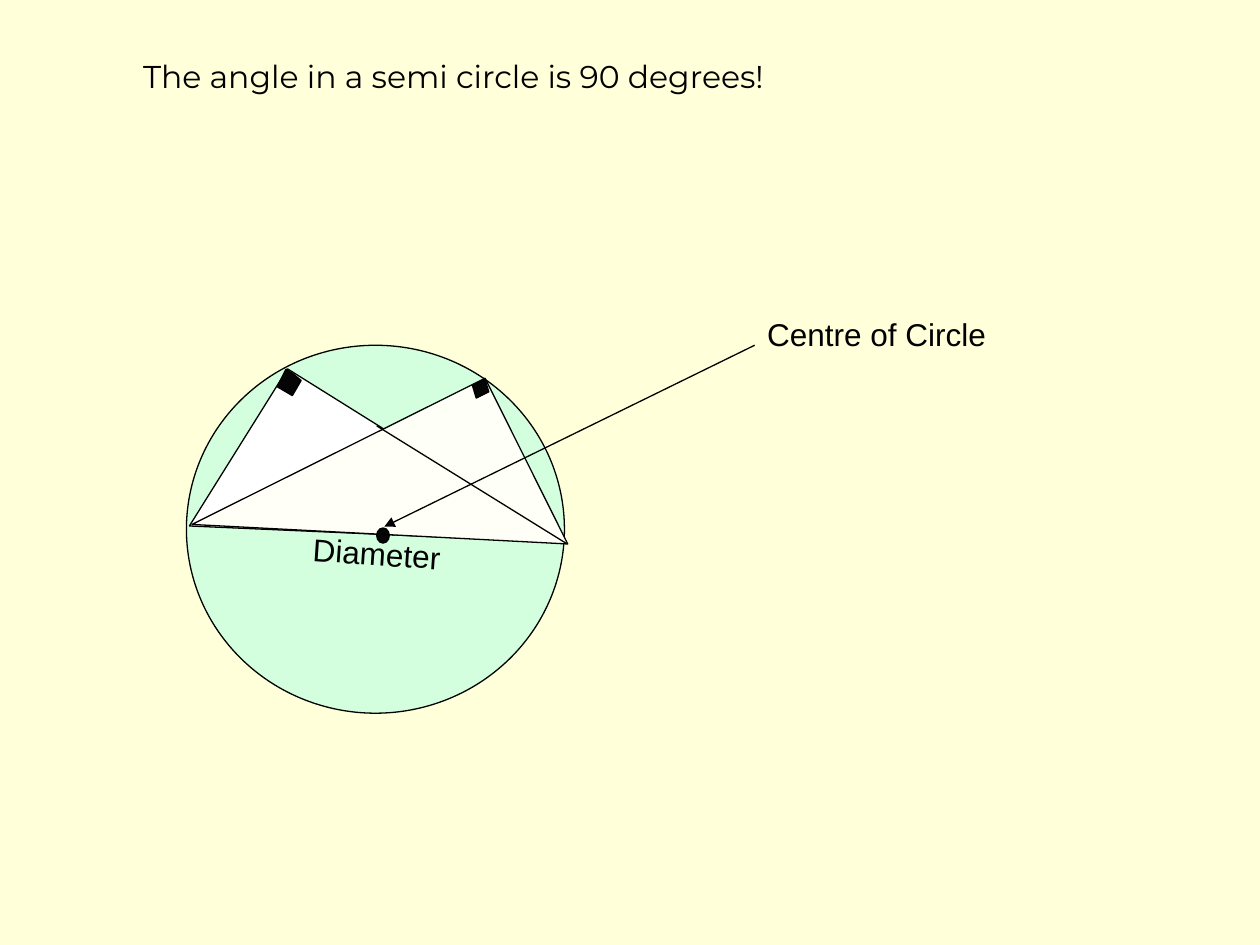
from lxml import etree
from pptx import Presentation
from pptx import util as u
from pptx.dml.color import RGBColor
from pptx.enum import shapes, text
from pptx.oxml.ns import qn

BLACK = "000000"
FORMS = shapes.MSO_SHAPE


def colour(target, value, alpha=None):
    """Give a fill or a font colour a hex value and an optional opacity in percent."""
    target.solid()
    target.fore_color.rgb = RGBColor.from_string(value)
    if alpha is not None:
        node = target._xPr.find(qn("a:solidFill"))[0]
        etree.SubElement(node, qn("a:alpha")).set("val", str(alpha * 1000))


def finish(shape, fill, alpha=None):
    shape.shadow.inherit = False
    colour(shape.fill, fill, alpha)
    colour(shape.line.fill, BLACK)
    shape.line.width = u.Pt(0.75)


def add_form(page, form, place, fill, alpha=None, turn=0, mirrored=False):
    shape = page.shapes.add_shape(form, *map(u.Inches, place))
    finish(shape, fill, alpha)
    shape.rotation = turn
    if mirrored:
        shape._element.spPr.find(qn("a:xfrm")).set("flipH", "1")


def add_line(page, start, end, arrow=False):
    line = page.shapes.add_connector(
        shapes.MSO_CONNECTOR.STRAIGHT, *map(u.Inches, start + end))
    colour(line.line.fill, BLACK)
    line.line.width = u.Pt(0.75)
    if arrow:
        etree.SubElement(line.line._get_or_add_ln(), qn("a:tailEnd")).set("type", "triangle")
    etree.SubElement(line._element.spPr, qn("a:effectLst"))


def add_angle_mark(page, points):
    builder = page.shapes.build_freeform(
        *map(u.Inches, points[0]), scale=1.0)
    builder.add_line_segments(
        [tuple(map(u.Inches, point)) for point in points[1:]], close=True)
    finish(builder.convert_to_shape(), BLACK, 98)


def write(box, words, font, align, wrap, place):
    """Place a text box or placeholder and set its one line of text."""
    box.left, box.top, box.width, box.height = map(u.Inches, place)
    frame = box.text_frame
    frame.text = words
    frame.word_wrap = wrap
    frame.auto_size = text.MSO_AUTO_SIZE.NONE
    frame.vertical_anchor = text.MSO_ANCHOR.TOP
    para = frame.paragraphs[0]
    para.alignment = align
    span = para.runs[0]
    span.font.name = font
    span.font.size = u.Pt(18)
    colour(span.font.fill, BLACK)
    return span


def add_label(page, words, align, wrap, place, turn=0):
    box = page.shapes.add_textbox(0, 0, 0, 0)
    write(box, words, "Arial", align, wrap, place)
    box.rotation = turn


def main():
    deck = Presentation()
    deck.slide_width, deck.slide_height = u.Inches(10), u.Inches(7.5)
    page = deck.slides.add_slide(deck.slide_layouts[5])
    colour(page.background.fill, "FFFFD9")

    # Circle and the two right-angled triangles on its diameter
    add_form(page, FORMS.OVAL, (1.48, 2.74, 3, 2.92), "00FFFF", 17)
    add_form(page, FORMS.RIGHT_TRIANGLE, (2.26, 2.94, 1.47, 2.6), "FFFFFF", turn=122)
    add_form(page, FORMS.RIGHT_TRIANGLE, (2.28, 2.94, 1.47, 2.6), "FFFFF7", 98,
             turn=243.5, mirrored=True)
    add_line(page, (4.49, 4.31), (2.99, 3.38))

    # Centre point and its pointer
    add_form(page, FORMS.OVAL, (2.99, 4.19, 0.1, 0.12), BLACK, 98)
    add_line(page, (5.99, 2.74), (3.05, 4.18), arrow=True)
    add_label(page, "Centre of Circle", text.PP_ALIGN.LEFT, True, (5.99, 2.45, 2.91, 0.4))

    # Right-angle marks
    add_angle_mark(page, [(2.27, 2.93), (2.3, 2.95), (2.33, 2.97), (2.39, 3.02),
                          (2.32, 3.14), (2.2, 3.07)])
    add_angle_mark(page, [(3.85, 3.01), (3.75, 3.06), (3.78, 3.16), (3.88, 3.11)])

    # Diameter label and title
    add_label(page, "Diameter", text.PP_ALIGN.CENTER, False, (2.38, 4.19, 1.22, 0.4), 3.9)
    title = write(page.shapes.title, "The angle in a semi circle is 90 degrees!",
                  "Montserrat", text.PP_ALIGN.CENTER, False, (0.68, 0.4, 5.84, 2.53))
    outline = title.font._element.get_or_add_ln() if hasattr(
        title.font._element, "get_or_add_ln") else None
    if outline is not None:
        outline.set("w", str(u.Pt(0.75)))
        fill = etree.SubElement(outline, qn("a:solidFill"))
        etree.SubElement(fill, qn("a:srgbClr")).set("val", BLACK)

    deck.save("out.pptx")


if __name__ == "__main__":
    main()
